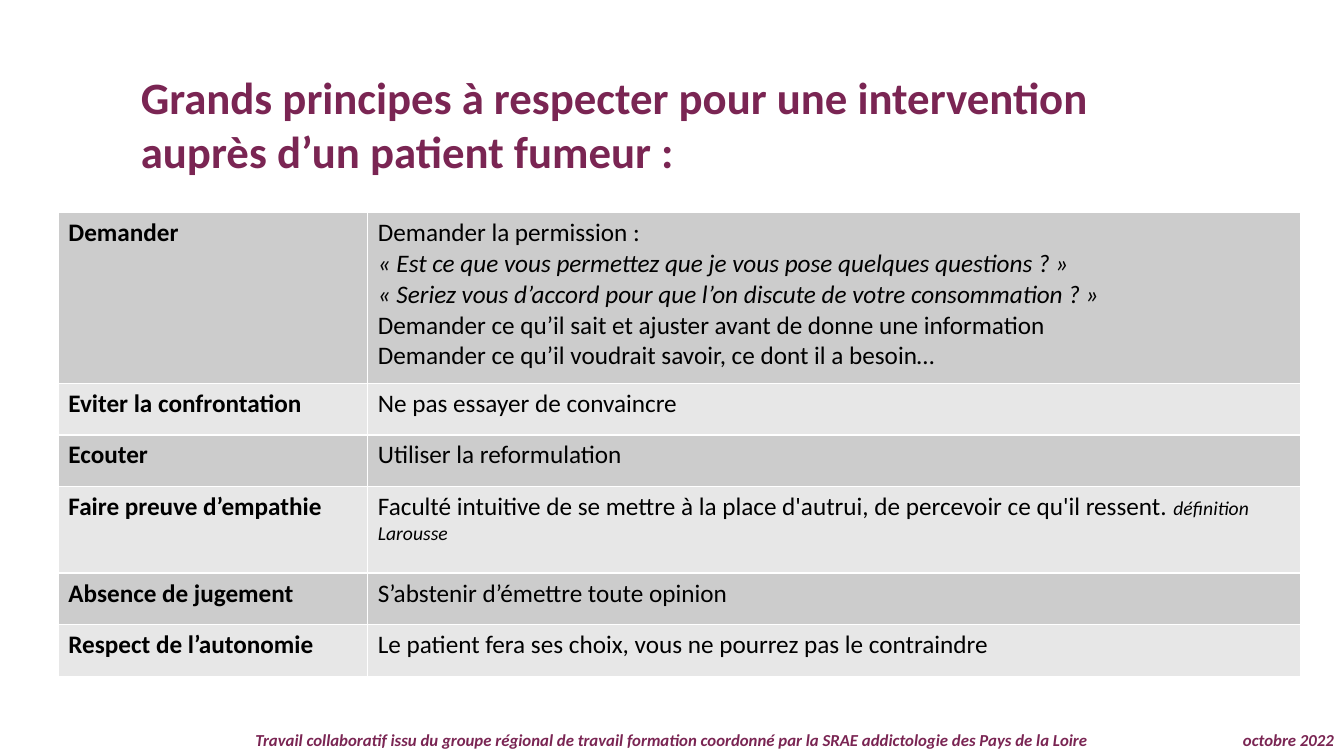
from dataclasses import dataclass

from lxml import etree
from pptx import Presentation
from pptx import util as u
from pptx.dml import color
from pptx.enum import text
from pptx.oxml import ns


@dataclass(frozen=True)
class Theme:
    font: str = "Calibri"
    plum: str = "7A2553"
    ink: str = "000000"
    border: str = "FFFFFF"
    bands: tuple = ("CCCCCC", "E7E7E7")
    title_size: int = 32
    body_size: int = 18
    citation_size: int = 14
    footer_size: int = 12


class SlideBuilder:
    def __init__(self, slide, theme):
        self.slide = slide
        self.theme = theme

    def style(self, run, size, colour, bold=False, italic=False):
        font = run.font
        font.name, font.size = self.theme.font, u.Pt(size)
        font.bold, font.italic = bold, italic
        font.color.rgb = color.RGBColor.from_string(colour)

    def text_box(self, content, left, top, width, height, size, italic=False,
                 align=text.PP_ALIGN.LEFT, anchor=text.MSO_ANCHOR.TOP, spacing=1.0):
        box = self.slide.shapes.add_textbox(u.Cm(left), u.Cm(top), u.Cm(width), u.Cm(height))
        frame = box.text_frame
        frame.word_wrap = True
        frame.vertical_anchor = anchor
        frame.text = content
        for paragraph in frame.paragraphs:
            paragraph.alignment = align
            paragraph.line_spacing = spacing
            for run in paragraph.runs:
                self.style(run, size, self.theme.plum, True, italic)

    def footer(self, content, left, width, align):
        self.text_box(content, left, 18.29, width, 0.76, self.theme.footer_size,
                      italic=True, align=align, anchor=text.MSO_ANCHOR.MIDDLE, spacing=0.9)

    def cell_borders(self, cell):
        properties = cell._tc.get_or_add_tcPr()
        for index, side in enumerate(("a:lnL", "a:lnR", "a:lnT", "a:lnB")):
            line = etree.Element(ns.qn(side), w=str(u.Pt(1)))
            fill = etree.SubElement(line, ns.qn("a:solidFill"))
            etree.SubElement(fill, ns.qn("a:srgbClr"), val=self.theme.border)
            properties.insert(index, line)

    def cell(self, cell, content, band, bold):
        cell.fill.solid()
        cell.fill.fore_color.rgb = color.RGBColor.from_string(band)
        self.cell_borders(cell)
        cell.text_frame.text = content
        for paragraph in cell.text_frame.paragraphs:
            for run in paragraph.runs:
                # Quoted questions are in italics
                self.style(run, self.theme.body_size, self.theme.ink, bold,
                           run.text.startswith("«"))

    def citation(self, cell, content):
        run = cell.text_frame.paragraphs[-1].add_run()
        run.text = content
        self.style(run, self.theme.citation_size, self.theme.ink, italic=True)

    def table(self, rows, left, top, widths, heights):
        frame = self.slide.shapes.add_table(
            len(rows), len(widths), u.Cm(left), u.Cm(top),
            u.Cm(sum(widths)), u.Cm(sum(heights)))
        table = frame.table
        table.first_row = table.horz_banding = False
        for column, width in zip(table.columns, widths):
            column.width = u.Cm(width)
        for index, (contents, height) in enumerate(zip(rows, heights)):
            table.rows[index].height = u.Cm(height)
            for position, content in enumerate(contents):
                self.cell(table.cell(index, position), content,
                          self.theme.bands[index % 2], bold=position == 0)
        return table


PRINCIPLES = [
    ("Demander",
     "Demander la permission :\v"
     "« Est ce que vous permettez que je vous pose quelques questions ? »\n"
     "« Seriez vous d’accord pour que l’on discute de votre consommation ? »\n"
     "Demander ce qu’il sait et ajuster avant de donne une information\n"
     "Demander ce qu’il voudrait savoir, ce dont il a besoin…"),
    ("Eviter la confrontation", "Ne pas essayer de convaincre"),
    ("Ecouter", "Utiliser la reformulation"),
    ("Faire preuve d’empathie",
     "Faculté intuitive de se mettre à la place d'autrui, de percevoir ce qu'il ressent. "),
    ("Absence de jugement", "S’abstenir d’émettre toute opinion"),
    ("Respect de l’autonomie",
     "Le patient fera ses choix, vous ne pourrez pas le contraindre"),
]


def main():
    presentation = Presentation()
    presentation.slide_width, presentation.slide_height = u.Cm(33.87), u.Cm(19.05)
    slide = presentation.slides.add_slide(presentation.slide_layouts[6])
    theme = Theme()
    builder = SlideBuilder(slide, theme)

    # Footer
    builder.footer("Travail collaboratif issu du groupe régional de travail formation "
                   "coordonné par la SRAE addictologie des Pays de la Loire",
                   0, 33.87, text.PP_ALIGN.CENTER)
    builder.footer("octobre 2022", 29.85, 4.02, text.PP_ALIGN.RIGHT)

    # Title
    builder.text_box("Grands principes à respecter pour une intervention\v"
                     "auprès d’un patient fumeur :",
                     3.3, 1.63, 30.5, 3, theme.title_size)

    # Principles and advice
    table = builder.table(PRINCIPLES, 1.47, 5.36, widths=(7.8, 23.5),
                          heights=(4.3, 1.3, 1.3, 2.18, 1.3, 1.3))
    builder.citation(table.cell(3, 1), "définition Larousse")

    presentation.save("out.pptx")


if __name__ == "__main__":
    main()
